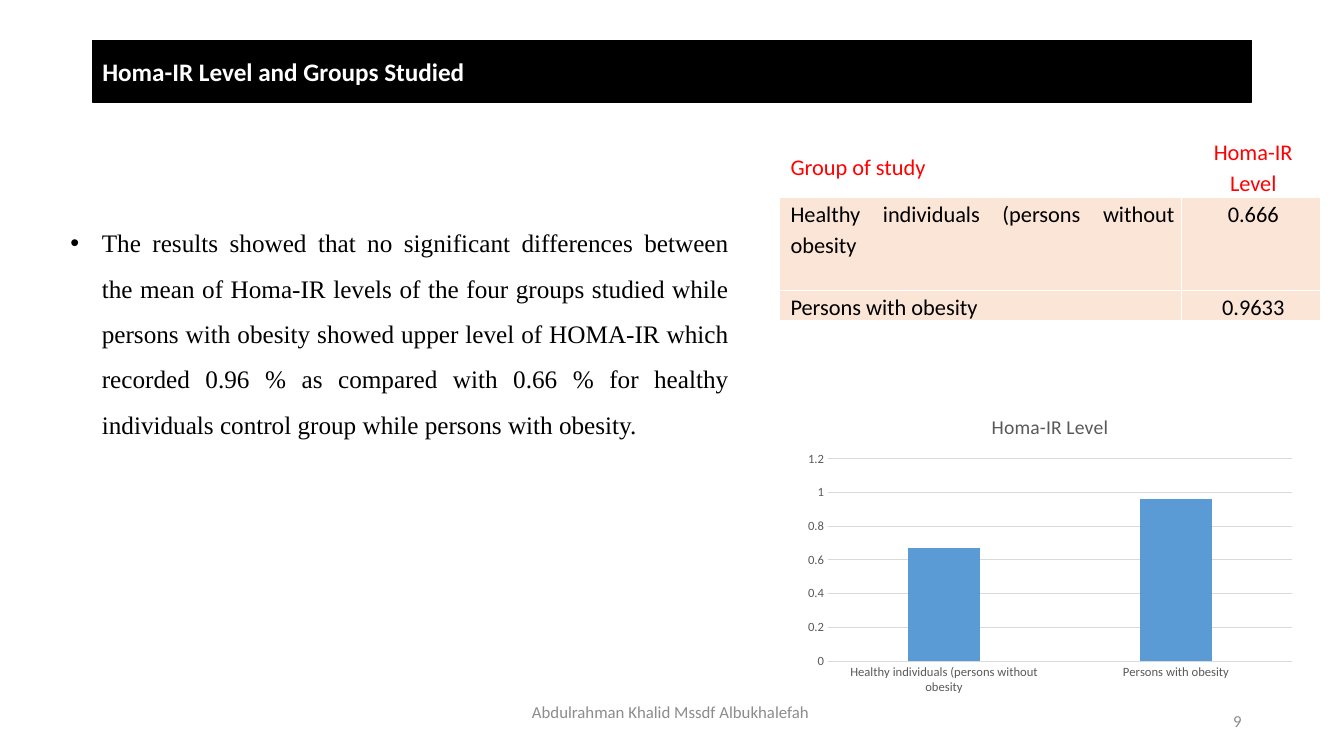
import pptx
import pptx.util
import pptx.dml.color
import pptx.chart.data
import pptx.enum.chart
import pptx.enum.shapes
import pptx.enum.text
import pptx.oxml
import pptx.oxml.ns
from dataclasses import dataclass
from lxml import etree

Pt = pptx.util.Pt
RGB = pptx.dml.color.RGBColor.from_string
Align = pptx.enum.text.PP_ALIGN
Anchor = pptx.enum.text.MSO_ANCHOR
qn = pptx.oxml.ns.qn


@dataclass(frozen=True)
class Theme:
    sans: str = "Calibri"
    serif: str = "Times New Roman"
    ink: str = "000000"
    paper: str = "FFFFFF"
    head: str = "FF0000"
    band: str = "FBE5D6"
    bar: str = "5B9BD5"
    grid: str = "D9D9D9"
    label: str = "595959"
    foot: str = "8C8C8C"
    large: int = 18
    cell: int = 16
    title: int = 14
    small: int = 12
    tick: int = 9


THEME = Theme()
HEALTHY, OBESE = "Healthy individuals (persons without obesity", "Persons with obesity"
LEVEL = "Homa-IR Level"


def apply(item, values):
    for name, value in values.items():
        setattr(item, name, value)


def style(font, size, color, face=THEME.sans, bold=False):
    apply(font, {"size": Pt(size), "name": face, "bold": bold})
    font.color.rgb = RGB(color)


def write(frame, text, size, color, align=Align.LEFT, face=THEME.sans,
          bold=False, space=1.0):
    para = frame.paragraphs[0]
    apply(para, {"alignment": align, "line_spacing": space})
    run = para.add_run()
    run.text = text
    style(run.font, size, color, face, bold)
    return para


def indent(para, left, first=0):
    props = para._p.get_or_add_pPr()
    props.set("marL", str(Pt(left)))
    props.set("indent", str(Pt(first)))
    return props


def add_text(slide, box, anchor=Anchor.MIDDLE):
    frame = slide.shapes.add_textbox(*map(Pt, box)).text_frame
    apply(frame, {"word_wrap": True, "vertical_anchor": anchor})
    return frame


# Title bar
def add_title(slide, box):
    bar = slide.shapes.add_shape(pptx.enum.shapes.MSO_SHAPE.RECTANGLE, *map(Pt, box))
    bar.shadow.inherit = False
    bar.fill.solid()
    bar.fill.fore_color.rgb = RGB(THEME.ink)
    bar.line.color.rgb = RGB(THEME.ink)
    bar.line.width = Pt(1)
    apply(bar.text_frame, {"word_wrap": True, "vertical_anchor": Anchor.MIDDLE})
    write(bar.text_frame, "Homa-IR Level and Groups Studied", THEME.large,
          THEME.paper, bold=True)


# Bulleted finding
def add_body(slide, box):
    text = ("The results showed that no significant differences between the mean of "
            "Homa-IR levels of the four groups studied while persons with obesity "
            "showed upper level of HOMA-IR which recorded 0.96 % as compared with "
            "0.66 % for healthy individuals control group while persons with obesity.")
    para = write(add_text(slide, box, Anchor.TOP), text, THEME.large, THEME.ink,
                 Align.JUSTIFY, THEME.serif, space=1.5)
    props = indent(para, 22.5, -22.5)
    etree.SubElement(props, qn("a:buFont")).set("typeface", "Arial")
    etree.SubElement(props, qn("a:buChar")).set("char", "•")


# Table of mean levels
def edge(cell):
    props = cell._tc.get_or_add_tcPr()
    for spot, side in enumerate(("L", "R", "T", "B")):
        line = pptx.oxml.parse_xml(
            f'<a:ln{side} {pptx.oxml.ns.nsdecls("a")} w="{Pt(1)}"><a:solidFill>'
            f'<a:srgbClr val="{THEME.paper}"/></a:solidFill></a:ln{side}>')
        props.insert(spot, line)


def add_grid(slide, box):
    rows = [("Group of study", LEVEL), (HEALTHY, "0.666"), (OBESE, "0.9633")]
    table = slide.shapes.add_table(len(rows), 2, *map(Pt, box)).table
    wide = 287.3
    for col, width in zip(table.columns, (wide, box[2] - wide)):
        col.width = Pt(width)
    for row, height in zip(table.rows, (44.3, 66.5, 21.5)):
        row.height = Pt(height)
    for r, texts in enumerate(rows):
        for c, text in enumerate(texts):
            cell = table.cell(r, c)
            top = r == 0
            apply(cell, {"margin_left": Pt(5), "margin_right": Pt(5),
                         "margin_top": 0, "margin_bottom": 0,
                         "vertical_anchor": Anchor.MIDDLE if top and c == 0
                         else Anchor.TOP})
            if top:
                cell.fill.background()
            else:
                cell.fill.solid()
                cell.fill.fore_color.rgb = RGB(THEME.band)
            edge(cell)
            side = Align.CENTER if c else Align.LEFT if top else Align.JUSTIFY
            para = write(cell.text_frame, text, THEME.cell,
                         THEME.head if top else THEME.ink, side, space=1.15)
            indent(para, 2.9)


# Column chart of the same levels
def add_plot(slide, box):
    data = pptx.chart.data.CategoryChartData()
    data.categories = [HEALTHY, OBESE]
    data.add_series(LEVEL, (0.67, 0.96))
    kind = pptx.enum.chart.XL_CHART_TYPE.COLUMN_CLUSTERED
    chart = slide.shapes.add_chart(kind, *map(Pt, box), data).chart
    style(chart.font, 10, THEME.ink)
    apply(chart, {"has_legend": False, "has_title": True})
    write(chart.chart_title.text_frame, LEVEL, THEME.title, THEME.label)
    chart.chart_title.include_in_layout = False
    plot = chart.plots[0]
    apply(plot, {"gap_width": 219, "overlap": -27, "vary_by_categories": False})
    fill = plot.series[0].format.fill
    fill.solid()
    fill.fore_color.rgb = RGB(THEME.bar)
    none = pptx.enum.chart.XL_TICK_MARK.NONE
    cat, val = chart.category_axis, chart.value_axis
    for axis in (cat, val):
        apply(axis, {"major_tick_mark": none, "minor_tick_mark": none})
        style(axis.tick_labels.font, THEME.tick, THEME.label)
    apply(val, {"minimum_scale": 0, "maximum_scale": 1.2, "major_unit": 0.2,
                "has_major_gridlines": True})
    val.format.line.fill.background()
    for line in (cat.format.line, val.major_gridlines.format.line):
        line.color.rgb = RGB(THEME.grid)
        line.width = Pt(0.75)


# Footer name and page number
def add_foot(slide, box):
    left, top, width, height = box
    write(add_text(slide, (left, top, 324, height)),
          "Abdulrahman Khalid Mssdf Albukhalefah", THEME.small, THEME.foot, Align.CENTER)
    write(add_text(slide, (left + width - 216, top + 6.5, 216, height)),
          "9", THEME.small, THEME.foot, Align.RIGHT)


def main():
    deck = pptx.Presentation()
    apply(deck, {"slide_width": Pt(960), "slide_height": Pt(540)})
    slide = deck.slides.add_slide(deck.slide_layouts[6])
    add_title(slide, (66, 29, 828, 44))
    add_foot(slide, (317, 494, 577, 28.8))
    add_body(slide, (43.2, 148.3, 484.6, 167.8))
    add_grid(slide, (556.8, 96.5, 386.6, 132.3))
    add_plot(slide, (570, 284.4, 360, 216))
    deck.save("out.pptx")


if __name__ == "__main__":
    main()
